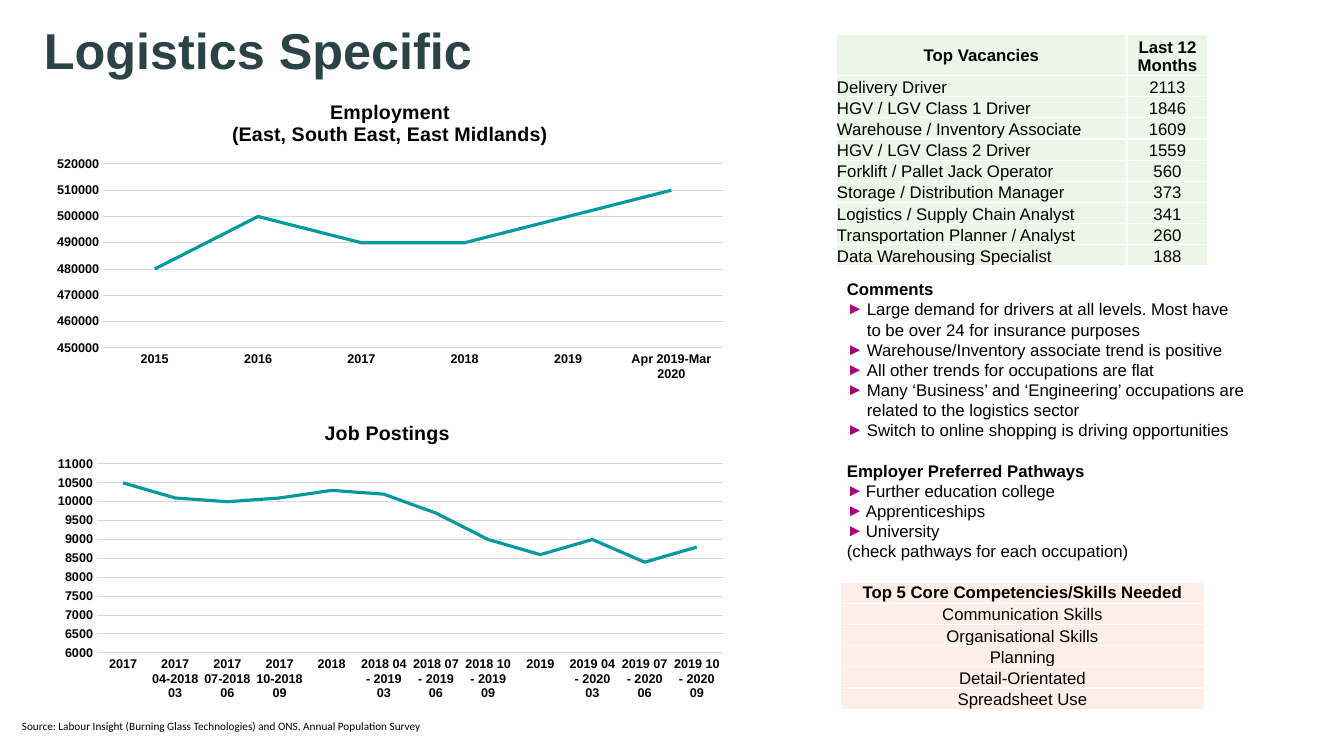
import pptx
import pptx.util
import pptx.dml.color
import pptx.chart.data
import pptx.enum.chart
import pptx.enum.text
import lxml.etree
from pptx.oxml.ns import qn

PX = 9144000 / 1008
Pt = pptx.util.Pt
align = pptx.enum.text.PP_ALIGN
anchor = pptx.enum.text.MSO_ANCHOR
black, grey, teal, pink = "000000", "D9D9D9", "0099A0", "AD007A"


def paint(item, color):
    """Give a font or a fill one solid colour."""
    if hasattr(item, "solid"):
        item.solid()
        item.fore_color.rgb = pptx.dml.color.RGBColor.from_string(color)
    else:
        item.color.rgb = pptx.dml.color.RGBColor.from_string(color)


def style(font, size, bold=False, color=black, face="Arial"):
    font.name, font.size, font.bold = face, Pt(size), bold
    paint(font, color)


deck = pptx.Presentation()
deck.slide_width, deck.slide_height = round(1344 * PX), round(756 * PX)
slide = deck.slides.add_slide(deck.slide_layouts[6])

# Title and source line
for text, box, size, bold, color, face in [
    ("Logistics Specific", (34, -20, 1276, 146), 36, True, "2B4345", "Arial"),
    ("Source: Labour Insight (Burning Glass Technologies) and ONS, Annual Population Survey",
     (12, 714, 549, 37), 8, False, black, "Calibri"),
]:
    frame = slide.shapes.add_textbox(*[round(n * PX) for n in box]).text_frame
    frame.word_wrap = True
    frame.text = text
    if bold:
        frame.vertical_anchor = anchor.MIDDLE
        frame.paragraphs[0].line_spacing = 0.9
    style(frame.paragraphs[0].runs[0].font, size, bold, color, face)

# Line charts: title, top, categories, values, axis range, title and plot places
charts = [
    ("Employment\n(East, South East, East Midlands)", 85,
     ["2015", "2016", "2017", "2018", "2019", "Apr 2019-Mar 2020"],
     [480000, 500000, 490000, 490000, 500000, 510000],
     (450000, 520000, 10000), (186, 12), (60, 79, 620, 184)),
    ("Job Postings", 405,
     ["2017", "2017 04-2018 03", "2017 07-2018 06", "2017 10-2018 09",
      "2018", "2018 04 - 2019 03", "2018 07 - 2019 06", "2018 10 - 2019 09",
      "2019", "2019 04 - 2020 03", "2019 07 - 2020 06", "2019 10 - 2020 09"],
     [10500, 10100, 10000, 10100, 10300, 10200, 9700, 9000, 8600, 9000, 8400, 8800],
     (6000, 11000, 500), (278, 12), (54, 59, 626, 189)),
]
wide, high = 694, 302
for name, top, cats, vals, span, head, plot in charts:
    data = pptx.chart.data.CategoryChartData()
    data.categories = cats
    data.add_series("Series 1", vals)
    chart = slide.shapes.add_chart(
        pptx.enum.chart.XL_CHART_TYPE.LINE,
        *[round(n * PX) for n in (43, top, wide, high)], data).chart
    style(chart.font, 10, True)
    chart.has_legend = False
    chart.has_title = True
    chart.chart_title.text_frame.text = name
    for para in chart.chart_title.text_frame.paragraphs:
        style(para.runs[0].font, 14, True)
    chart.plots[0].vary_by_categories = False

    line = chart.plots[0].series[0]
    line.smooth = False
    line.marker.style = pptx.enum.chart.XL_MARKER_STYLE.NONE
    line.format.line.width = Pt(2.25)
    paint(line.format.line.fill, teal)

    axis = chart.value_axis
    axis.minimum_scale, axis.maximum_scale, axis.major_unit = span
    axis.format.line.fill.background()
    for rule in (axis.major_gridlines.format.line, chart.category_axis.format.line):
        rule.width = Pt(0.75)
        paint(rule.fill, grey)
    for axis in (chart.value_axis, chart.category_axis):
        axis.major_tick_mark = pptx.enum.chart.XL_TICK_MARK.NONE
        style(axis.tick_labels.font, 9, True)

    # Fixed places inside the chart
    area = chart.element.xpath("c:chart/c:plotArea")[0]
    for owner, slot, place in [(chart.chart_title.element, 1, head), (area, 0, plot)]:
        for old in owner.findall(qn("c:layout")):
            owner.remove(old)
        layout = lxml.etree.Element(qn("c:layout"))
        owner.insert(slot, layout)
        manual = lxml.etree.SubElement(layout, qn("c:manualLayout"))
        rows = [("xMode", "edge"), ("yMode", "edge")]
        if owner is area:
            rows.insert(0, ("layoutTarget", "inner"))
        rows += [(key, f"{n / full:.4f}")
                 for key, n, full in zip("xywh", place, (wide, high, wide, high))]
        for key, value in rows:
            lxml.etree.SubElement(manual, qn("c:" + key)).set("val", value)

# Tables: place, column widths, header height, fill, rows
tables = [
    ((836, 34), (291, 81), 41, "EDF4E8", [
        ("Top Vacancies", "Last 12 Months"),
        ("Delivery Driver", "2113"),
        ("HGV / LGV Class 1 Driver", "1846"),
        ("Warehouse / Inventory Associate", "1609"),
        ("HGV / LGV Class 2 Driver", "1559"),
        ("Forklift / Pallet Jack Operator", "560"),
        ("Storage / Distribution Manager", "373"),
        ("Logistics / Supply Chain Analyst", "341"),
        ("Transportation Planner / Analyst", "260"),
        ("Data Warehousing Specialist", "188")]),
    ((840, 582), (365,), 21, "FDEEE8", [
        ("Top 5 Core Competencies/Skills Needed",),
        ("Communication Skills",),
        ("Organisational Skills",),
        ("Planning",),
        ("Detail-Orientated",),
        ("Spreadsheet Use",)]),
]
for (left, top), cols, first, tint, rows in tables:
    size = (left, top, sum(cols), first + 21 * (len(rows) - 1))
    table = slide.shapes.add_table(
        len(rows), len(cols), *[round(n * PX) for n in size]).table
    for col, width in zip(table.columns, cols):
        col.width = round(width * PX)
    for r, row in enumerate(rows):
        table.rows[r].height = round((21 if r else first) * PX)
        for c, text in enumerate(row):
            cell = table.cell(r, c)
            cell.margin_left = cell.margin_right = cell.margin_top = round(PX)
            cell.margin_bottom = 0
            cell.vertical_anchor = anchor.BOTTOM if r or c else anchor.MIDDLE
            cell.text = text
            para = cell.text_frame.paragraphs[0]
            listed = r > 0 and c == 0 and len(cols) > 1
            para.alignment = align.LEFT if listed else align.CENTER
            style(para.runs[0].font, 12, r == 0)
            props = cell._tc.get_or_add_tcPr()
            for side in ("lnL", "lnR", "lnT", "lnB"):
                edge = lxml.etree.SubElement(props, qn("a:" + side), w="12700")
                fill = lxml.etree.SubElement(edge, qn("a:solidFill"))
                lxml.etree.SubElement(fill, qn("a:srgbClr"), val="FFFFFF")
            paint(cell.fill, tint)

# Comments and pathways
notes = [
    ("head", "Comments"),
    ("item", "Large demand for drivers at all levels. Most have to be over 24 for insurance purposes"),
    ("item", "Warehouse/Inventory associate trend is positive"),
    ("item", "All other trends for occupations are flat"),
    ("item", "Many ‘Business’ and ‘Engineering’ occupations are related to the logistics sector"),
    ("item", "Switch to online shopping is driving opportunities"),
    ("head", "Employer Preferred Pathways"),
    ("item", "Further education college"),
    ("item", "Apprenticeships"),
    ("item", "University"),
    ("plain", "(check pathways for each occupation)"),
]
frame = slide.shapes.add_textbox(
    *[round(n * PX) for n in (837, 274, 419, 336)]).text_frame
frame.word_wrap = True
for i, (kind, text) in enumerate(notes):
    para = frame.add_paragraph() if i else frame.paragraphs[0]
    para.text = text
    para.line_spacing = Pt(14.4)
    if kind == "head" and i:
        para.space_before = Pt(14.4)
    if kind == "item":
        props = para._p.get_or_add_pPr()
        indent = round((20 if i < 6 else 19) * PX)
        props.set("marL", str(indent))
        props.set("indent", str(-indent))
        color = lxml.etree.SubElement(props, qn("a:buClr"))
        lxml.etree.SubElement(color, qn("a:srgbClr"), val=pink)
        lxml.etree.SubElement(props, qn("a:buFont"), typeface="Arial")
        lxml.etree.SubElement(props, qn("a:buChar"), char="►")
    style(para.runs[0].font, 12, kind == "head")

deck.save("out.pptx")
